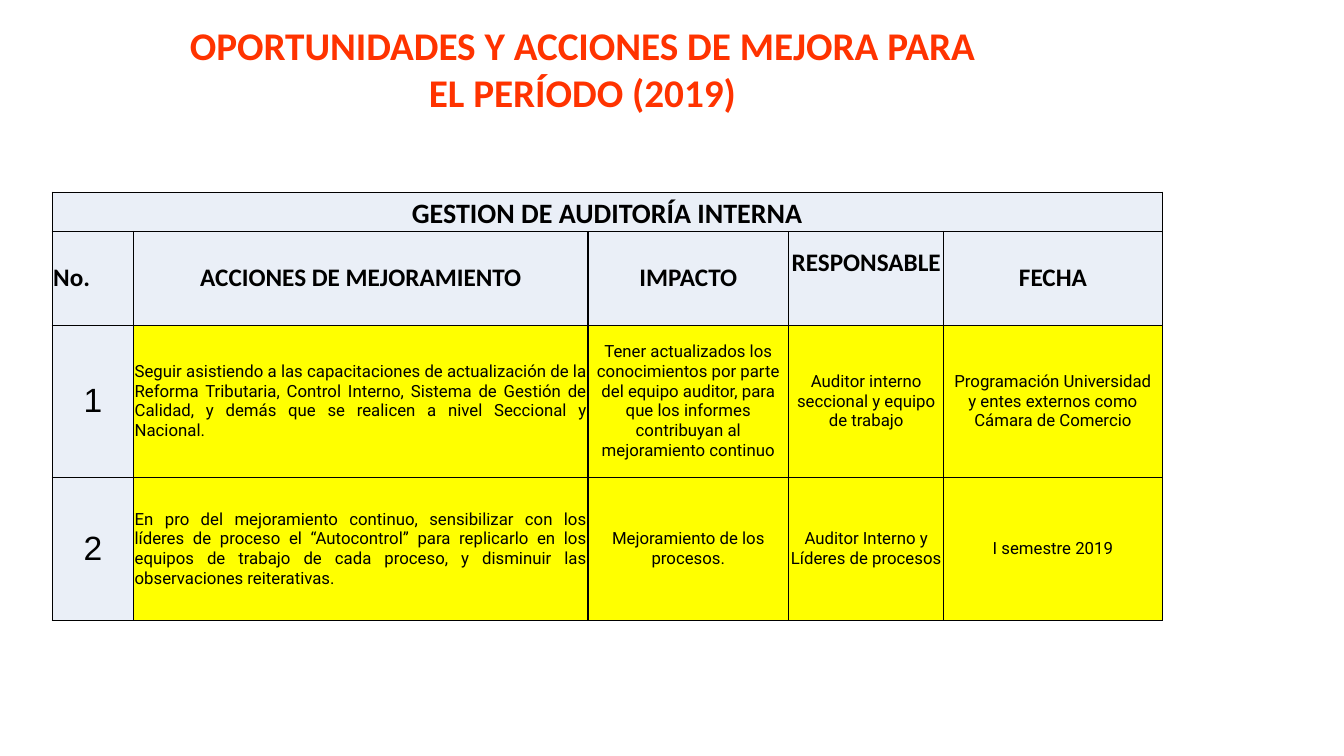
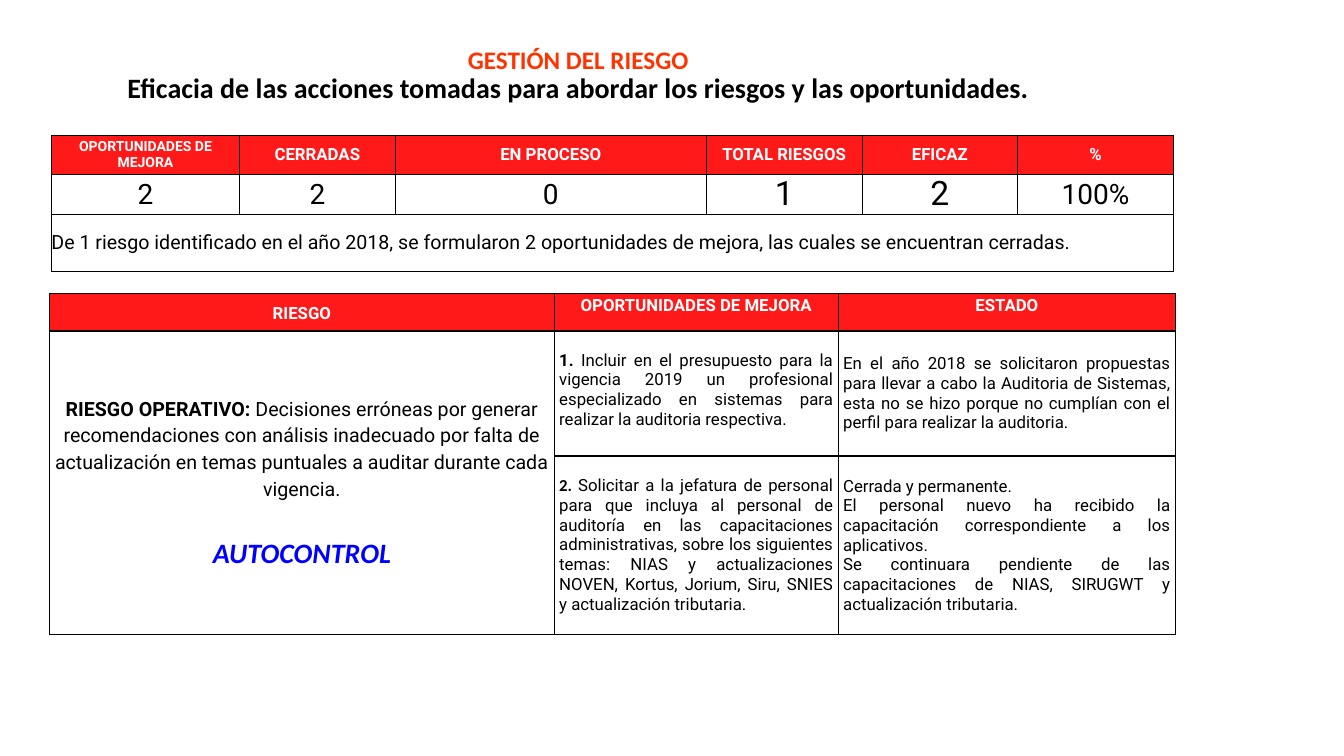
import dataclasses

import lxml.etree
import pptx
import pptx.dml.color
import pptx.enum.text
import pptx.oxml.ns
import pptx.util

Pt = pptx.util.Pt
ALIGN = pptx.enum.text.PP_ALIGN
ANCHOR = pptx.enum.text.MSO_ANCHOR

COLORS = {
    "black": "000000",
    "white": "FFFFFF",
    "orange": "FF3300",
    "red": "FF0000",
    "blue": "0000FF",
    "pale": "EAEFF7",
    "yellow": "FFFF00",
}

STYLES = {
    "title": ("Calibri", 28, "orange", True, False),
    "small title": ("Calibri", 18, "orange", True, False),
    "heading": ("Calibri", 20, "black", True, False),
    "column": ("Calibri", 18, "black", True, False),
    "number": ("Arial", 24, "black", False, False),
    "body": ("Roboto", 12, "black", False, False),
    "strong": ("Roboto", 12, "black", True, False),
    "strong calibri": ("Calibri", 12, "black", True, False),
    "header small": ("Roboto", 10, "white", True, False),
    "header": ("Roboto", 12, "white", True, False),
    "count": ("Roboto", 20, "black", False, False),
    "large count": ("Roboto", 24, "black", False, False),
    "note": ("Roboto", 14, "black", False, False),
    "strong note": ("Roboto", 14, "black", True, False),
    "slogan": ("Calibri", 20, "blue", True, True),
}


@dataclasses.dataclass
class Cell:
    paragraphs: list
    fill: str = "white"
    align: object = ALIGN.CENTER
    anchor: object = ANCHOR.MIDDLE
    top: float = 0
    bottom: float = 0
    gap: float = 0
    spacing: float = 1
    span: tuple = (1, 1)


def cell(style, text, **options):
    return Cell([[(style, line)] for line in text.split("\n")], **options)


class Deck:
    """Holds the style and the current slide, and draws each kind of element."""

    def __init__(self):
        self.presentation = pptx.Presentation()
        self.presentation.slide_width = Pt(960)
        self.presentation.slide_height = Pt(540)
        self.slide = None

    def new_slide(self):
        self.slide = self.presentation.slides.add_slide(self.presentation.slide_layouts[6])

    def color(self, name):
        return pptx.dml.color.RGBColor.from_string(COLORS[name])

    def add_text(self, frame, paragraphs, align, spacing=1, gap=0):
        for index, runs in enumerate(paragraphs):
            paragraph = frame.add_paragraph() if index else frame.paragraphs[0]
            paragraph.alignment = align
            paragraph.line_spacing = spacing
            if index and gap:
                paragraph.space_before = Pt(gap)
            for style, text in runs:
                if text == "\n":
                    paragraph.add_line_break()
                    continue
                run = paragraph.add_run()
                run.text = text
                name, size, color, run.font.bold, run.font.italic = STYLES[style]
                run.font.name = name
                run.font.size = Pt(size)
                run.font.color.rgb = self.color(color)

    def title(self, left, top, width, height, runs, anchor=ANCHOR.TOP, spacing=1):
        box = self.slide.shapes.add_textbox(Pt(left), Pt(top), Pt(width), Pt(height))
        box.text_frame.word_wrap = True
        box.text_frame.vertical_anchor = anchor
        self.add_text(box.text_frame, [runs], ALIGN.CENTER, spacing)

    def border(self, table_cell, width):
        properties = table_cell._tc.get_or_add_tcPr()
        for side in ("a:lnL", "a:lnR", "a:lnT", "a:lnB"):
            line = lxml.etree.SubElement(properties, pptx.oxml.ns.qn(side), w=str(Pt(width)))
            fill = lxml.etree.SubElement(line, pptx.oxml.ns.qn("a:solidFill"))
            lxml.etree.SubElement(fill, pptx.oxml.ns.qn("a:srgbClr"), val=COLORS["black"])

    def fill(self, table_cell, name):
        table_cell.fill.solid()
        table_cell.fill.fore_color.rgb = self.color(name)
        if name == "red":
            properties = table_cell._tc.get_or_add_tcPr()
            color = properties.find(pptx.oxml.ns.qn("a:solidFill"))[0]
            lxml.etree.SubElement(color, pptx.oxml.ns.qn("a:alpha"), val="90000")

    def table(self, left, top, widths, heights, rows, line, margin=0):
        table = self.slide.shapes.add_table(
            len(heights), len(widths), Pt(left), Pt(top), Pt(sum(widths)), Pt(sum(heights))
        ).table
        table.first_row = table.horz_banding = False
        for column, width in zip(table.columns, widths):
            column.width = Pt(width)
        for row, height in zip(table.rows, heights):
            row.height = Pt(height)
        for row_index, row in enumerate(rows):
            for column_index in range(len(widths)):
                content = row[column_index] if column_index < len(row) else None
                content = content or Cell([], row[0].fill if row[0] else "white")
                target = table.cell(row_index, column_index)
                target.margin_left = target.margin_right = Pt(margin)
                target.margin_top = Pt(content.top)
                target.margin_bottom = Pt(content.bottom)
                target.vertical_anchor = content.anchor
                self.border(target, line)
                self.fill(target, content.fill)
                self.add_text(target.text_frame, content.paragraphs, content.align,
                              content.spacing, content.gap)
                if content.span != (1, 1):
                    down, across = content.span
                    target.merge(table.cell(row_index + down - 1, column_index + across - 1))


def action_row(number, action, *details):
    return [
        cell("number", number, fill="pale"),
        cell("body", action, fill="yellow", align=ALIGN.JUSTIFY),
        *[cell("body", detail, fill="yellow") for detail in details],
    ]


def improvement_slide(deck):
    deck.new_slide()
    rows = [
        [cell("heading", "GESTION DE AUDITORÍA INTERNA", fill="pale",
              anchor=ANCHOR.BOTTOM, span=(1, 5))],
        [
            cell("column", "No.", fill="pale", align=ALIGN.JUSTIFY),
            cell("column", "ACCIONES DE MEJORAMIENTO", fill="pale"),
            cell("column", "IMPACTO", fill="pale"),
            cell("column", "RESPONSABLE", fill="pale", bottom=22),
            cell("column", "FECHA", fill="pale"),
        ],
        action_row(
            "1",
            "Seguir asistiendo a las capacitaciones de actualización de la Reforma Tributaria, "
            "Control Interno, Sistema de Gestión de Calidad, y demás que se realicen a nivel "
            "Seccional y Nacional.",
            "Tener actualizados los conocimientos por parte del equipo auditor, para que los "
            "informes contribuyan al mejoramiento continuo",
            "Auditor interno seccional y equipo de trabajo",
            "Programación Universidad\ny entes externos como Cámara de Comercio",
        ),
        action_row(
            "2",
            "En pro del mejoramiento continuo, sensibilizar con los líderes de proceso el "
            "“Autocontrol” para replicarlo en los equipos de trabajo de cada proceso, y "
            "disminuir las observaciones reiterativas.",
            "Mejoramiento de los procesos.",
            "Auditor Interno y Líderes de procesos",
            "I semestre 2019",
        ),
    ]
    deck.table(37.3, 137.3, [58.2, 324.5, 143.4, 110.8, 156], [28, 67, 108.7, 102.2],
               rows, line=1, margin=0.7)
    deck.title(124, 11.5, 584, 75,
               [("title", "OPORTUNIDADES Y ACCIONES DE MEJORA PARA EL PERÍODO (2019)")])


def risk_slide(deck):
    deck.new_slide()
    deck.title(24, 0, 778, 78.5, [
        ("small title", "GESTIÓN DEL RIESGO"),
        ("small title", "\n"),
        ("heading", "Eficacia de las acciones tomadas para abordar los riesgos y las "
                    "oportunidades."),
    ], anchor=ANCHOR.BOTTOM, spacing=0.9)

    headers = ["CERRADAS", "EN PROCESO", "TOTAL RIESGOS", "EFICAZ", "%"]
    counts = [("count", "2"), ("count", "2"), ("count", "0"),
              ("large count", "1"), ("large count", "2"), ("count", "100%")]
    summary = [
        [cell("header small", "OPORTUNIDADES DE MEJORA", fill="red"),
         *[cell("header", header, fill="red") for header in headers]],
        [cell(style, count) for style, count in counts],
        [cell("note", "De 1 riesgo identificado en el año 2018, se formularon 2 oportunidades "
                      "de mejora, las cuales se encuentran cerradas.",
              align=ALIGN.JUSTIFY, span=(1, 6))],
    ]
    deck.table(36.7, 96.8, [134.4, 111.2, 222.3, 111.2, 111.2, 111.2], [27.7, 27.7, 40.3],
               summary, line=0.5)

    upper = {"anchor": ANCHOR.TOP, "align": ALIGN.JUSTIFY, "top": 14}
    risks = [
        [cell("header", "RIESGO", fill="red", spacing=1.15),
         *[cell("header", header, fill="red", anchor=ANCHOR.TOP, spacing=1.15)
           for header in ("OPORTUNIDADES DE MEJORA", "ESTADO")]],
        [
            Cell([
                [("strong note", "RIESGO OPERATIVO: "),
                 ("note", "Decisiones erróneas por generar recomendaciones con análisis "
                          "inadecuado por falta de actualización en temas puntuales a auditar "
                          "durante cada vigencia.")],
                [("slogan", "AUTOCONTROL")],
            ], gap=22, spacing=1.15, span=(2, 1)),
            Cell([[
                ("strong", "1. "),
                ("body", "Incluir en el presupuesto para la vigencia 2019 un profesional "
                         "especializado en sistemas para realizar la auditoria respectiva."),
            ]], **upper),
            cell("body", "En el año 2018 se solicitaron propuestas para llevar a cabo la "
                         "Auditoria de Sistemas, esta no se hizo porque no cumplían con el "
                         "perfil para realizar la auditoria.", align=ALIGN.JUSTIFY),
        ],
        [
            None,
            Cell([[
                ("strong calibri", "2. "),
                ("body", "Solicitar a la jefatura de personal para que incluya al personal de "
                         "auditoría en las capacitaciones administrativas, sobre los siguientes "
                         "temas: NIAS y actualizaciones NOVEN, Kortus, Jorium, Siru, SNIES y "
                         "actualización tributaria."),
            ]], **upper),
            cell("body", "Cerrada y permanente.\n"
                         "El personal nuevo ha recibido la capacitación correspondiente a los "
                         "aplicativos.\n"
                         "Se continuara pendiente de las capacitaciones de NIAS, SIRUGWT y "
                         "actualización tributaria.", align=ALIGN.JUSTIFY),
        ],
    ]
    deck.table(35.3, 209.4, [360.7, 202.8, 240.9], [27, 89.3, 127.8], risks, line=1, margin=3.5)


def main():
    deck = Deck()
    improvement_slide(deck)
    risk_slide(deck)
    deck.presentation.save("out.pptx")


if __name__ == "__main__":
    main()
